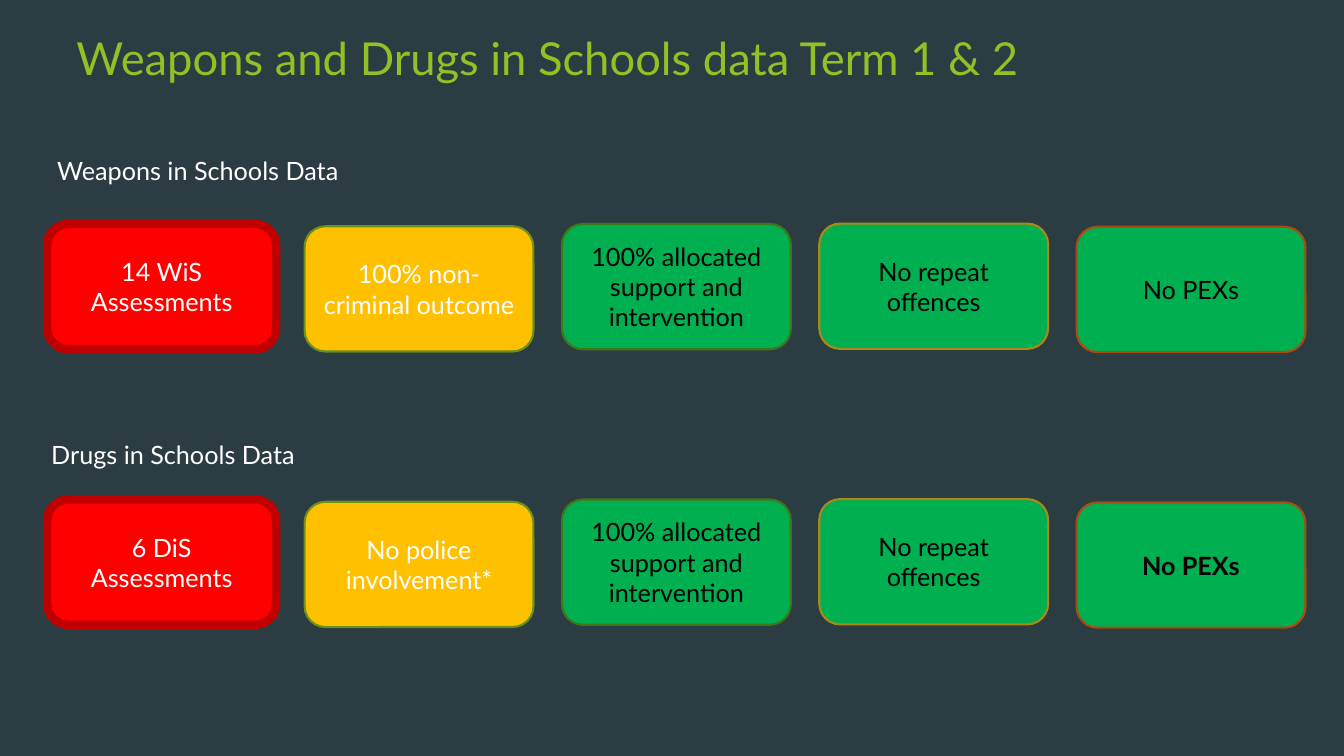
from dataclasses import dataclass

from pptx import Presentation
from pptx.dml.color import RGBColor
from pptx.enum.shapes import MSO_SHAPE
from pptx.enum.text import MSO_ANCHOR, PP_ALIGN
from pptx.util import Pt

ROUNDED = MSO_SHAPE.ROUNDED_RECTANGLE
MIDDLE, TOP = MSO_ANCHOR.MIDDLE, MSO_ANCHOR.TOP
CENTER, LEFT = PP_ALIGN.CENTER, PP_ALIGN.LEFT


@dataclass(frozen=True)
class Theme:
    font: str = "Lato"
    title_size: float = 32.4
    body_size: float = 18
    background: str = "2C3C43"
    title: str = "90C226"
    white: str = "FFFFFF"
    black: str = "000000"
    red: str = "FF0000"
    amber: str = "FFC000"
    green: str = "00B050"
    red_edge: str = "C00000"
    amber_edge: str = "6B901C"
    support_edge: str = "3E7618"
    repeat_edge: str = "AA8916"
    exclusion_edge: str = "AB4B12"


class SlideBuilder:
    def __init__(self, slide, theme):
        self.slide = slide
        self.theme = theme
        fill = slide.background.fill
        fill.solid()
        fill.fore_color.rgb = RGBColor.from_string(theme.background)

    def set_text(self, shape, text, size, color, align, anchor, bold=False):
        frame = shape.text_frame
        frame.word_wrap = True
        frame.vertical_anchor = anchor
        frame.text = text
        for paragraph in frame.paragraphs:
            paragraph.alignment = align
            font = paragraph.font
            font.name = self.theme.font
            font.size = Pt(size)
            font.bold = bold
            font.color.rgb = RGBColor.from_string(color)

    def label(self, text, left, top, width, height, size, color):
        box = self.slide.shapes.add_textbox(Pt(left), Pt(top), Pt(width), Pt(height))
        self.set_text(box, text, size, color, LEFT, TOP)

    def card(self, text, left, top, width, height, style, bold=False):
        fill, edge, edge_width, text_color = style
        card = self.slide.shapes.add_shape(
            ROUNDED, Pt(left), Pt(top), Pt(width), Pt(height))
        card.shadow.inherit = False
        card.fill.solid()
        card.fill.fore_color.rgb = RGBColor.from_string(fill)
        card.line.color.rgb = RGBColor.from_string(edge)
        card.line.width = Pt(edge_width)
        self.set_text(card, text, self.theme.body_size, text_color, CENTER, MIDDLE, bold)


def main():
    theme = Theme()
    deck = Presentation()
    deck.slide_width, deck.slide_height = Pt(960), Pt(540)
    builder = SlideBuilder(deck.slides.add_slide(deck.slide_layouts[6]), theme)

    # Title
    builder.label("Weapons and Drugs in Schools data Term 1 & 2",
                  47.5, 18, 700.5, 103.5, theme.title_size, theme.title)

    # Section headings
    builder.label("Weapons in Schools Data", 33.8, 107.3, 481, 51,
                  theme.body_size, theme.white)
    builder.label("Drugs in Schools Data", 29.5, 310.3, 481, 29,
                  theme.body_size, theme.white)

    # Column looks: vertical offset, then fill, edge, edge width and text colour
    columns = [
        (0, (theme.red, theme.red_edge, 6, theme.white)),
        (1.6, (theme.amber, theme.amber_edge, 1.5, theme.white)),
        (0, (theme.green, theme.support_edge, 1.5, theme.black)),
        (-0.3, (theme.green, theme.repeat_edge, 1.5, theme.black)),
        (2, (theme.green, theme.exclusion_edge, 1.5, theme.black)),
    ]
    support = "100% allocated support and intervention"
    repeats = "No repeat offences"
    exclusions = "No PEXs"

    # Outcome rows: top, bold last card, card texts
    rows = [
        (160, False, ["14 WiS Assessments", "100% non-criminal outcome",
                      support, repeats, exclusions]),
        (356.8, True, ["6 DiS\nAssessments", "No police involvement*",
                       support, repeats, exclusions]),
    ]
    first_left, pitch, width, height = 33.8, 183.8, 163.5, 89.5
    for row_top, bold_exclusions, outcomes in rows:
        for column, (outcome, (offset, style)) in enumerate(zip(outcomes, columns)):
            builder.card(outcome, first_left + column * pitch, row_top + offset,
                         width, height, style,
                         bold=bold_exclusions and outcome == exclusions)

    deck.save("out.pptx")


if __name__ == "__main__":
    main()
